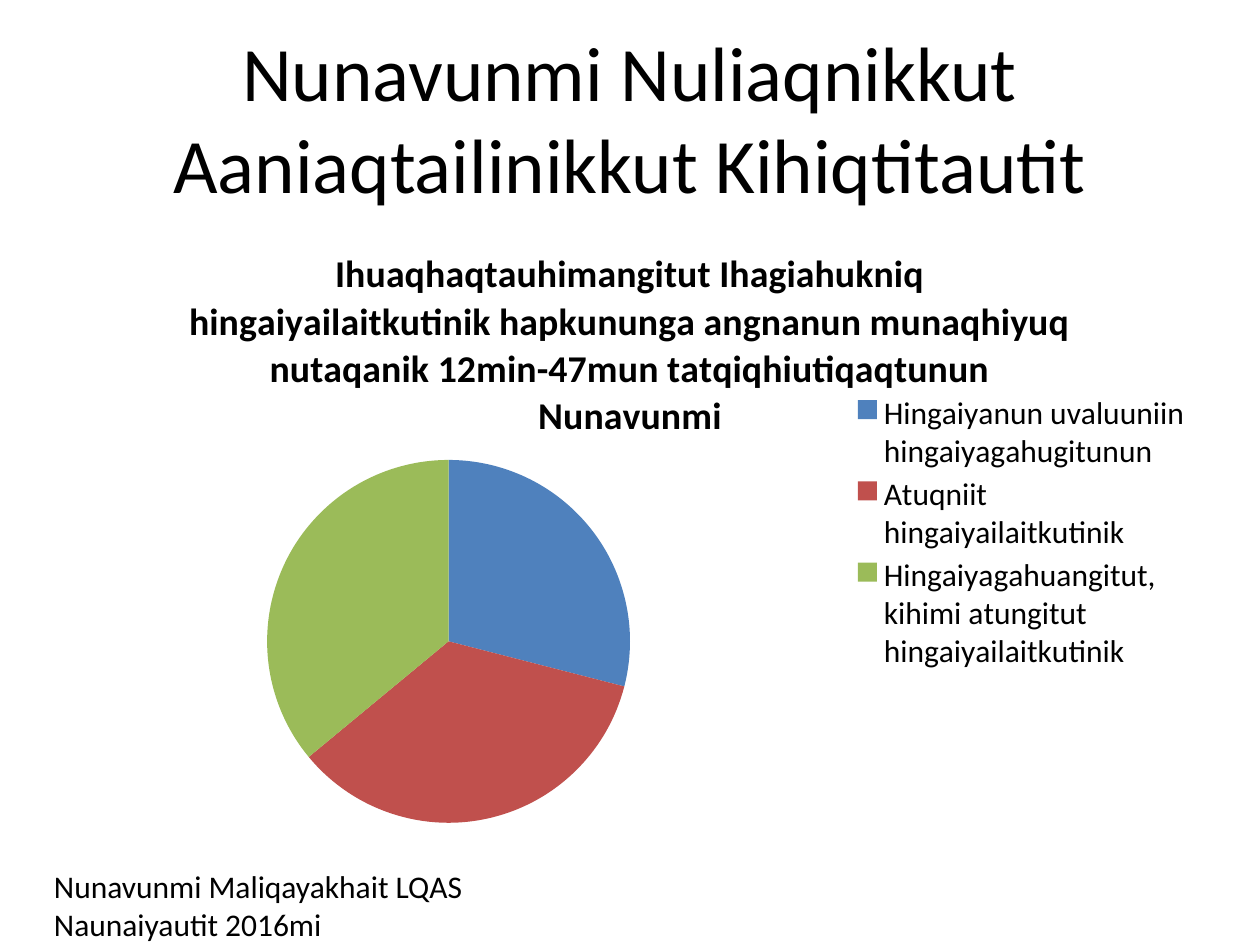
import pptx
import pptx.chart.data
import pptx.dml.color
import pptx.enum.chart
import pptx.enum.text
import pptx.oxml
import pptx.oxml.ns
import pptx.util

Pt = pptx.util.Pt
FONT = "Calibri"
COLORS = {
    "text": "000000",
    "pregnant": "4F81BD",
    "using": "C0504D",
    "not_using": "9BBB59",
}


def style(font, size, bold=False):
    font.name = FONT
    font.size = Pt(size)
    font.bold = bold
    font.color.rgb = pptx.dml.color.RGBColor.from_string(COLORS["text"])


def place(parent, index, x, y, w, h, target=""):
    """Give a chart part a manual layout in fractions of the chart area."""
    for old in parent.findall(pptx.oxml.ns.qn("c:layout")):
        parent.remove(old)
    parent.insert(index, pptx.oxml.parse_xml(
        f'<c:layout {pptx.oxml.ns.nsdecls("c")}><c:manualLayout>{target}'
        '<c:xMode val="edge"/><c:yMode val="edge"/>'
        f'<c:x val="{x}"/><c:y val="{y}"/><c:w val="{w}"/><c:h val="{h}"/>'
        '</c:manualLayout></c:layout>'))


prs = pptx.Presentation()
prs.slide_width, prs.slide_height = Pt(720), Pt(540)
slide = prs.slides.add_slide(prs.slide_layouts[5])

# Heading
heading = slide.shapes.title
heading.left, heading.top, heading.width, heading.height = Pt(36), Pt(21.6), Pt(648), Pt(90)
heading.text_frame.text = "Nunavunmi Nuliaqnikkut Aaniaqtailinikkut Kihiqtitautit"
heading.text_frame.vertical_anchor = pptx.enum.text.MSO_ANCHOR.MIDDLE
heading.text_frame.paragraphs[0].alignment = pptx.enum.text.PP_ALIGN.CENTER
style(heading.text_frame.paragraphs[0].font, 44)

# Unmet need pie
needs = pptx.chart.data.CategoryChartData()
needs.categories = [
    "Hingaiyanun uvaluuniin hingaiyagahugitunun",
    "Atuqniit hingaiyailaitkutinik",
    "Hingaiyagahuangitut, kihimi atungitut hingaiyailaitkutinik",
]
needs.add_series("Series 1", (29, 35, 36))
chart = slide.shapes.add_chart(
    pptx.enum.chart.XL_CHART_TYPE.PIE, Pt(36), Pt(126), Pt(648), Pt(356.4), needs).chart
style(chart.font, 18)

chart.has_title = True
chart.chart_title.include_in_layout = False
chart_heading = chart.chart_title.text_frame
chart_heading.text = (
    "Ihuaqhaqtauhimangitut Ihagiahukniq hingaiyailaitkutinik hapkununga angnanun "
    "munaqhiyuq nutaqanik 12min-47mun tatqiqhiutiqaqtunun Nunavunmi")
style(chart_heading.paragraphs[0].font, 21.6, bold=True)

pie = chart.plots[0]
pie.vary_by_categories = True
for i, group in enumerate(("pregnant", "using", "not_using")):
    fill = pie.series[0].points[i].format.fill
    fill.solid()
    fill.fore_color.rgb = pptx.dml.color.RGBColor.from_string(COLORS[group])

chart.has_legend = True
chart.legend.position = pptx.enum.chart.XL_LEGEND_POSITION.RIGHT
chart.legend.include_in_layout = False
style(chart.legend.font, 18)

plot_area = chart.element.find(".//" + pptx.oxml.ns.qn("c:plotArea"))
legend = chart.element.find(".//" + pptx.oxml.ns.qn("c:legend"))
place(plot_area, 0, 0.18, 0.38, 0.32, 0.59, '<c:layoutTarget val="inner"/>')
place(legend, 1, 0.69, 0.27, 0.31, 0.46)

# Survey source
source = slide.shapes.add_textbox(Pt(23.76), Pt(491.76), Pt(293.76), Pt(28.8)).text_frame
source.word_wrap = True
source.auto_size = pptx.enum.text.MSO_AUTO_SIZE.SHAPE_TO_FIT_TEXT
source.text = "Nunavunmi Maliqayakhait LQAS Naunaiyautit 2016mi"
style(source.paragraphs[0].font, 18)

prs.save("out.pptx")
